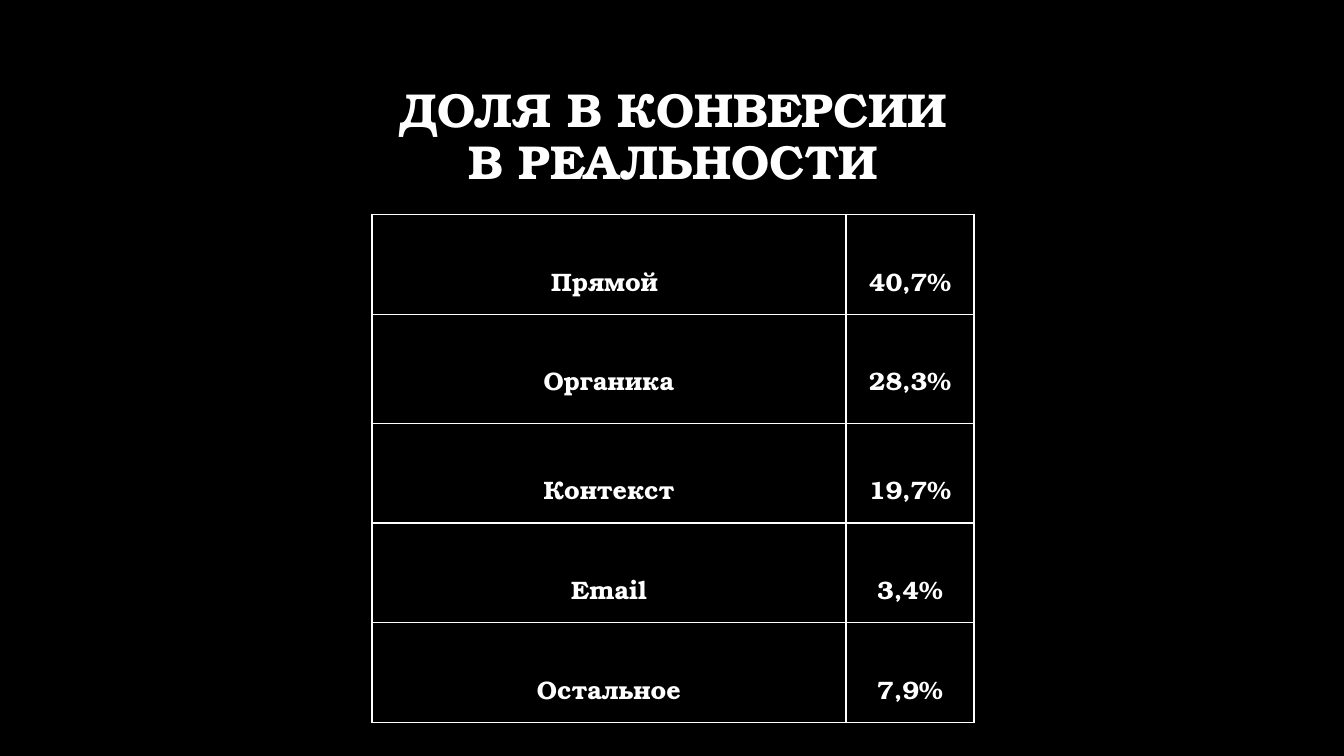
import pptx
import pptx.dml.color
import pptx.enum.text
import pptx.oxml
import pptx.oxml.ns
import pptx.util
from pptx.util import Inches

BLACK = pptx.dml.color.RGBColor(0x00, 0x00, 0x00)
WHITE = pptx.dml.color.RGBColor(0xFF, 0xFF, 0xFF)
FONT = "TeX Gyre Bonum"
COLUMN_WIDTHS = (4.7, 1.27)
ROW_HEIGHTS = (0.99, 1.08, 0.99, 0.99, 0.99)
SHARES = (
    ("Прямой ", "40,7%"),
    ("Органика", "28,3%"),
    ("Контекст", "19,7%"),
    ("Email", "3,4%"),
    ("Остальное", "7,9%"),
)


def style_paragraph(para, size):
    para.alignment = pptx.enum.text.PP_ALIGN.CENTER
    para.font.name = FONT
    para.font.size = pptx.util.Pt(size)
    para.font.bold = True
    para.font.color.rgb = WHITE


def add_title(page, text):
    box = page.shapes.add_textbox(Inches(1.36), Inches(0.5), Inches(10.64), Inches(1.43))
    frame = box.text_frame
    frame.word_wrap = True
    frame.vertical_anchor = pptx.enum.text.MSO_ANCHOR.BOTTOM
    para = frame.paragraphs[0]
    para.text = text
    para.line_spacing = 0.9
    style_paragraph(para, 34)


def add_borders(cell):
    """Draw a 1 pt line on all four sides; call before filling the cell."""
    properties = cell._tc.get_or_add_tcPr()
    for side in ("lnL", "lnR", "lnT", "lnB"):
        properties.append(pptx.oxml.parse_xml(
            f'<a:{side} {pptx.oxml.ns.nsdecls("a")} w="{pptx.util.Pt(1)}">'
            f'<a:solidFill><a:srgbClr val="{WHITE}"/></a:solidFill></a:{side}>'
        ))


def fill_cell(cell, text):
    add_borders(cell)
    cell.fill.solid()
    cell.fill.fore_color.rgb = BLACK
    cell.margin_top = Inches(0.47)
    para = cell.text_frame.paragraphs[0]
    para.text = text
    style_paragraph(para, 18)


def add_share_table(page):
    frame = page.shapes.add_table(
        len(SHARES), len(COLUMN_WIDTHS), Inches(3.69), Inches(2.13),
        Inches(sum(COLUMN_WIDTHS)), Inches(sum(ROW_HEIGHTS)),
    )
    table = frame.table
    table.first_row = False
    table.horz_banding = False
    for column, width in zip(table.columns, COLUMN_WIDTHS):
        column.width = Inches(width)
    for row, height, texts in zip(table.rows, ROW_HEIGHTS, SHARES):
        row.height = Inches(height)
        for cell, text in zip(row.cells, texts):
            fill_cell(cell, text)


def main():
    deck = pptx.Presentation()
    deck.slide_width = Inches(13.33)
    deck.slide_height = Inches(7.5)
    page = deck.slides.add_slide(deck.slide_layouts[6])
    page.background.fill.solid()
    page.background.fill.fore_color.rgb = BLACK
    add_title(page, "ДОЛЯ В КОНВЕРСИИ\vВ РЕАЛЬНОСТИ")
    add_share_table(page)
    deck.save("out.pptx")


if __name__ == "__main__":
    main()
